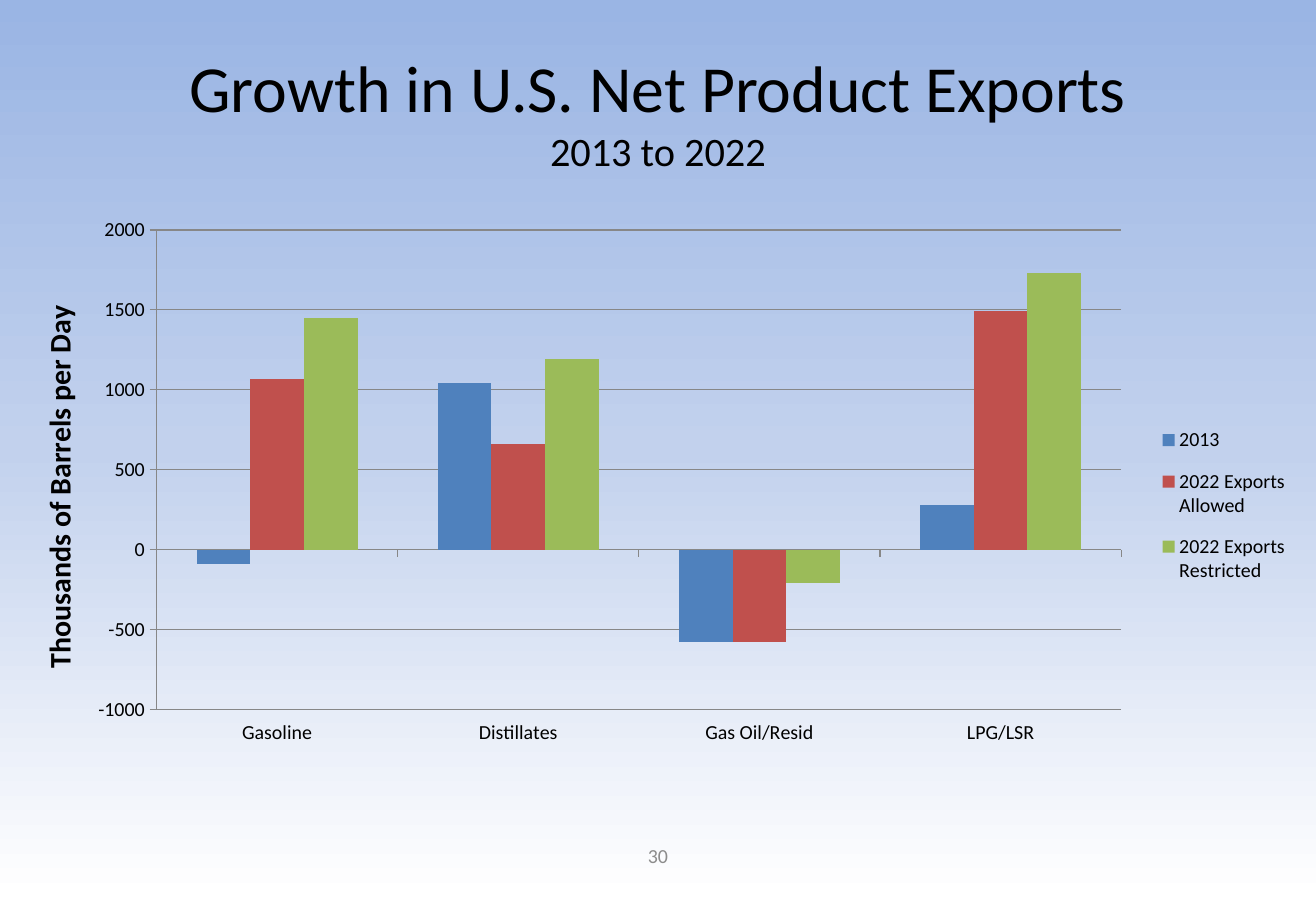
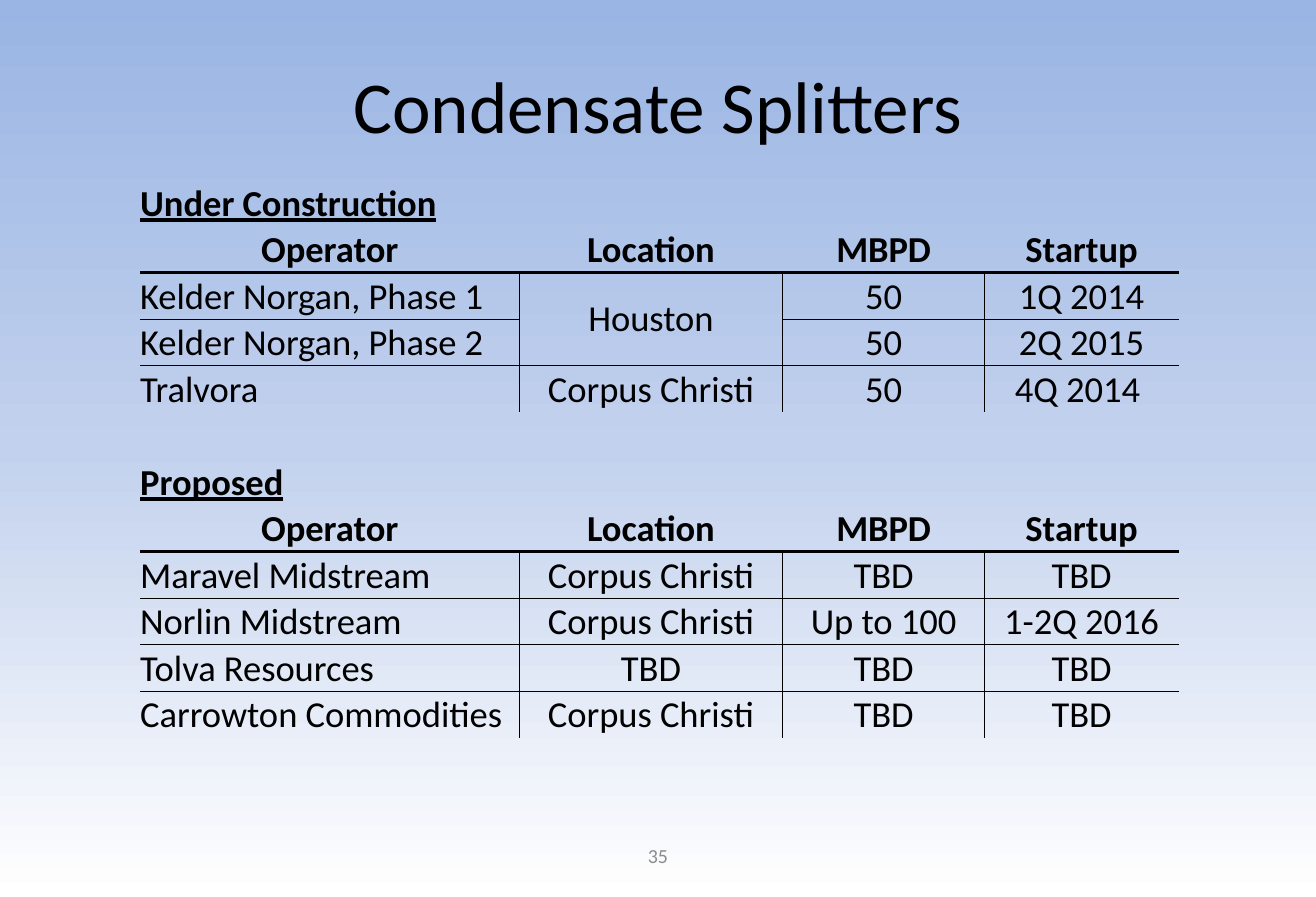
from copy import deepcopy

from pptx import Presentation
from pptx.chart.data import CategoryChartData
from pptx.dml.color import RGBColor
from pptx.enum.chart import XL_CHART_TYPE, XL_LEGEND_POSITION as LEGEND
from pptx.enum.chart import XL_TICK_LABEL_POSITION as LABELS, XL_TICK_MARK as TICK
from pptx.enum.text import MSO_ANCHOR as ANCHOR, MSO_AUTO_SIZE as FIT, PP_ALIGN as ALIGN
from pptx.oxml import parse_xml
from pptx.oxml.ns import nsdecls
from pptx.util import Inches, Pt

FONT = "Calibri"
BLACK = RGBColor(0x00, 0x00, 0x00)
GRAY = RGBColor(0x8C, 0x8C, 0x8C)
AXIS = RGBColor(0x87, 0x87, 0x87)
BLUE = RGBColor(0x4F, 0x81, 0xBD)
RED = RGBColor(0xC0, 0x50, 0x4D)
GREEN = RGBColor(0x9B, 0xBB, 0x59)
SKY = [RGBColor(0x9A, 0xB5, 0xE4), RGBColor(0xC2, 0xD1, 0xED), RGBColor(0xFF, 0xFF, 0xFF)]

COL, ROW = Inches(11) / 20, Inches(7.5) / 30
TITLE_BOX = (1, 1, 18, 5)
LOW_TITLE_BOX = (1, 1.2, 18, 5)
NUMBER_BOX = (6.84, 27.8, 6.32, 1.6)
CHART_BOX = (0, 7, 20, 19.8)
TABLE_BOX = (2.13, 6, 15.76, 18.68)

PRODUCTS = ["Gasoline", "Distillates", "Gas Oil/Resid", "LPG/LSR"]
EXPORTS = [
    ("2013", BLUE, (-90, 1040, -580, 280)),
    ("2022 Exports Allowed", RED, (1070, 660, -580, 1490)),
    ("2022 Exports Restricted", GREEN, (1450, 1190, -210, 1730)),
]

HEADINGS = ["Operator", "Location", "MBPD", "Startup"]
COL_WIDTHS = [3.17, 2.2, 1.69, 1.62]
SPLITTERS = [
    ("Under Construction", [
        ("Kelder Norgan, Phase 1", "Houston", "50", "1Q 2014"),
        ("Kelder Norgan, Phase 2", "", "50", "2Q 2015"),
        ("Tralvora", "Corpus Christi", "50", "4Q 2014 "),
    ]),
    ("Proposed", [
        ("Maravel Midstream", "Corpus Christi", "TBD", "TBD"),
        ("Norlin Midstream", "Corpus Christi", "Up to 100", "1-2Q 2016"),
        ("Tolva Resources", "TBD", "TBD", "TBD"),
        ("Carrowton Commodities", "Corpus Christi", "TBD", "TBD"),
    ]),
]


def place(box):
    """Turn grid columns and rows into left, top, width and height."""
    x, y, w, h = box
    return int(x * COL), int(y * ROW), int(w * COL), int(h * ROW)


def style(font, size, color=BLACK, bold=False, underline=False):
    """Apply the deck's font with the given look."""
    font.name, font.size, font.bold, font.underline = FONT, Pt(size), bold, underline
    font.color.rgb = color


def paint_background(master):
    """Give every slide the sky gradient, dark at the top."""
    fill = master.background.fill
    fill.gradient()
    fill.gradient_angle = 270
    stops = master.element.xpath(".//p:bg//a:gsLst")[0]
    stops.append(deepcopy(stops[0]))
    for i, (stop, color) in enumerate(zip(fill.gradient_stops, SKY)):
        stop.position = i / 2
        stop.color.rgb = color


def add_slide(prs, title, sizes, box, number):
    """Add a slide with a styled title, one size a line, and its page number."""
    s = prs.slides.add_slide(prs.slide_layouts[5])
    sp = s.shapes.title
    sp.left, sp.top, sp.width, sp.height = place(box)
    tf = sp.text_frame
    tf.text = title
    tf.auto_size, tf.vertical_anchor = FIT.NONE, ANCHOR.MIDDLE
    p = tf.paragraphs[0]
    p.alignment = ALIGN.CENTER
    for r, size in zip(p.runs, sizes):
        style(r.font, size)
    tf = s.shapes.add_textbox(*place(NUMBER_BOX)).text_frame
    tf.word_wrap, tf.vertical_anchor = True, ANCHOR.MIDDLE
    tf.text = str(number)
    p = tf.paragraphs[0]
    p.alignment = ALIGN.CENTER
    style(p.runs[0].font, 12, GRAY)
    return s


def set_layout(chart, query, index, inner=False, **percent):
    """Fix a chart part's place, in percent of the chart."""
    part = chart.element.xpath(query)[0]
    for old in part.xpath("./c:layout"):
        part.remove(old)
    target = '<c:layoutTarget val="inner"/>' if inner else ""
    modes = "".join(f'<c:{k}Mode val="edge"/>' for k in "xy")
    values = "".join(f'<c:{k} val="{v / 100:g}"/>' for k, v in percent.items())
    part.insert(index, parse_xml(
        f'<c:layout {nsdecls("c")}><c:manualLayout>{target}{modes}{values}'
        "</c:manualLayout></c:layout>"))


def add_export_chart(s, box):
    """Add the clustered columns of net exports by product."""
    data = CategoryChartData()
    data.categories = PRODUCTS
    for name, _, values in EXPORTS:
        data.add_series(name, values)
    chart = s.shapes.add_chart(XL_CHART_TYPE.COLUMN_CLUSTERED, *place(box), data).chart
    chart.has_title = False
    style(chart.font, 18)
    plot = chart.plots[0]
    plot.gap_width, plot.overlap, plot.vary_by_categories = 150, 0, False
    for series, (_, color, _) in zip(plot.series, EXPORTS):
        series.invert_if_negative = False
        series.format.fill.solid()
        series.format.fill.fore_color.rgb = color

    products, barrels = chart.category_axis, chart.value_axis
    for axis in (products, barrels):
        axis.major_tick_mark, axis.minor_tick_mark = TICK.OUTSIDE, TICK.NONE
        axis.format.line.color.rgb = AXIS
        style(axis.tick_labels.font, 12)
    products.tick_label_position = LABELS.LOW
    barrels.minimum_scale, barrels.maximum_scale, barrels.major_unit = -1000, 2000, 500
    barrels.major_gridlines.format.line.color.rgb = AXIS
    tf = barrels.axis_title.text_frame
    tf.text = "Thousands of Barrels per Day"
    style(tf.paragraphs[0].runs[0].font, 18, bold=True)
    body = chart.element.xpath(".//c:valAx/c:title//a:bodyPr")[0]
    body.set("rot", "-5400000")
    body.set("vert", "horz")

    chart.has_legend = True
    chart.legend.position = LEGEND.RIGHT
    chart.legend.include_in_layout = False
    style(chart.legend.font, 12)
    set_layout(chart, ".//c:plotArea", 0, True, x=11.9, y=3.5, w=73.3, h=81)
    set_layout(chart, ".//c:valAx/c:title", 1, x=2.5, y=15.3)
    set_layout(chart, ".//c:legend", 1, x=87, y=34, w=12, h=32)


def set_borders(cell, **widths):
    """Draw the left, right, top and bottom borders that have a width."""
    tc_pr = cell._tc.get_or_add_tcPr()
    for i, side in enumerate("LRTB"):
        width = widths.get(side, 0)
        fill = f'<a:solidFill><a:srgbClr val="{BLACK}"/></a:solidFill>' if width else "<a:noFill/>"
        tc_pr.insert(i, parse_xml(
            f'<a:ln{side} {nsdecls("a")} w="{Pt(width)}">{fill}</a:ln{side}>'))


def fill_cell(cell, text="", align=ALIGN.LEFT, bold=False, underline=False, **borders):
    """Write one cell without margins or fill."""
    cell.margin_left = cell.margin_right = cell.margin_top = cell.margin_bottom = 0
    cell.vertical_anchor = ANCHOR.BOTTOM
    cell.fill.background()
    set_borders(cell, **borders)
    cell.text = text
    p = cell.text_frame.paragraphs[0]
    p.alignment = align
    for r in p.runs:
        style(r.font, 22, bold=bold, underline=underline)


def fill_group(table, top, name, rows):
    """Write a group's name, headings and ruled rows; return the next free row."""
    last_col, last_row = len(HEADINGS) - 1, len(rows) - 1
    for c, heading in enumerate(HEADINGS):
        fill_cell(table.cell(top, c), "" if c else name, bold=True, underline=True)
        fill_cell(table.cell(top + 1, c), heading, ALIGN.CENTER, bold=True, B=1.5)
        for i, row in enumerate(rows):
            fill_cell(table.cell(top + 2 + i, c), row[c], ALIGN.CENTER if c else ALIGN.LEFT,
                      L=0.5 if c else 0, R=0.5 if c < last_col else 0,
                      T=0.5 if i else 1.5, B=0.5 if i < last_row else 0)
    return top + 2 + len(rows)


def add_splitter_table(s, box):
    """Add both groups of splitters in one table, a blank row between them."""
    count = sum(len(rows) + 2 for _, rows in SPLITTERS) + len(SPLITTERS) - 1
    table = s.shapes.add_table(count, len(HEADINGS), *place(box)).table
    table.first_row = table.horz_banding = False
    for column, width in zip(table.columns, COL_WIDTHS):
        column.width = Inches(width)
    top = 0
    for name, rows in SPLITTERS:
        if top:
            for c in range(len(HEADINGS)):
                fill_cell(table.cell(top, c))
            top += 1
        top = fill_group(table, top, name, rows)
    houston = table.cell(2, 1)
    houston.merge(table.cell(3, 1))
    houston.vertical_anchor = ANCHOR.MIDDLE


def main():
    """Build and save the two slides."""
    prs = Presentation()
    prs.slide_width, prs.slide_height = Inches(11), Inches(7.5)
    paint_background(prs.slide_master)
    s = add_slide(prs, "Growth in U.S. Net Product Exports\v2013 to 2022", (39.6, 24.3),
                  LOW_TITLE_BOX, 30)
    add_export_chart(s, CHART_BOX)
    s = add_slide(prs, "Condensate Splitters", (44,), TITLE_BOX, 35)
    add_splitter_table(s, TABLE_BOX)
    prs.save("out.pptx")


if __name__ == "__main__":
    main()
